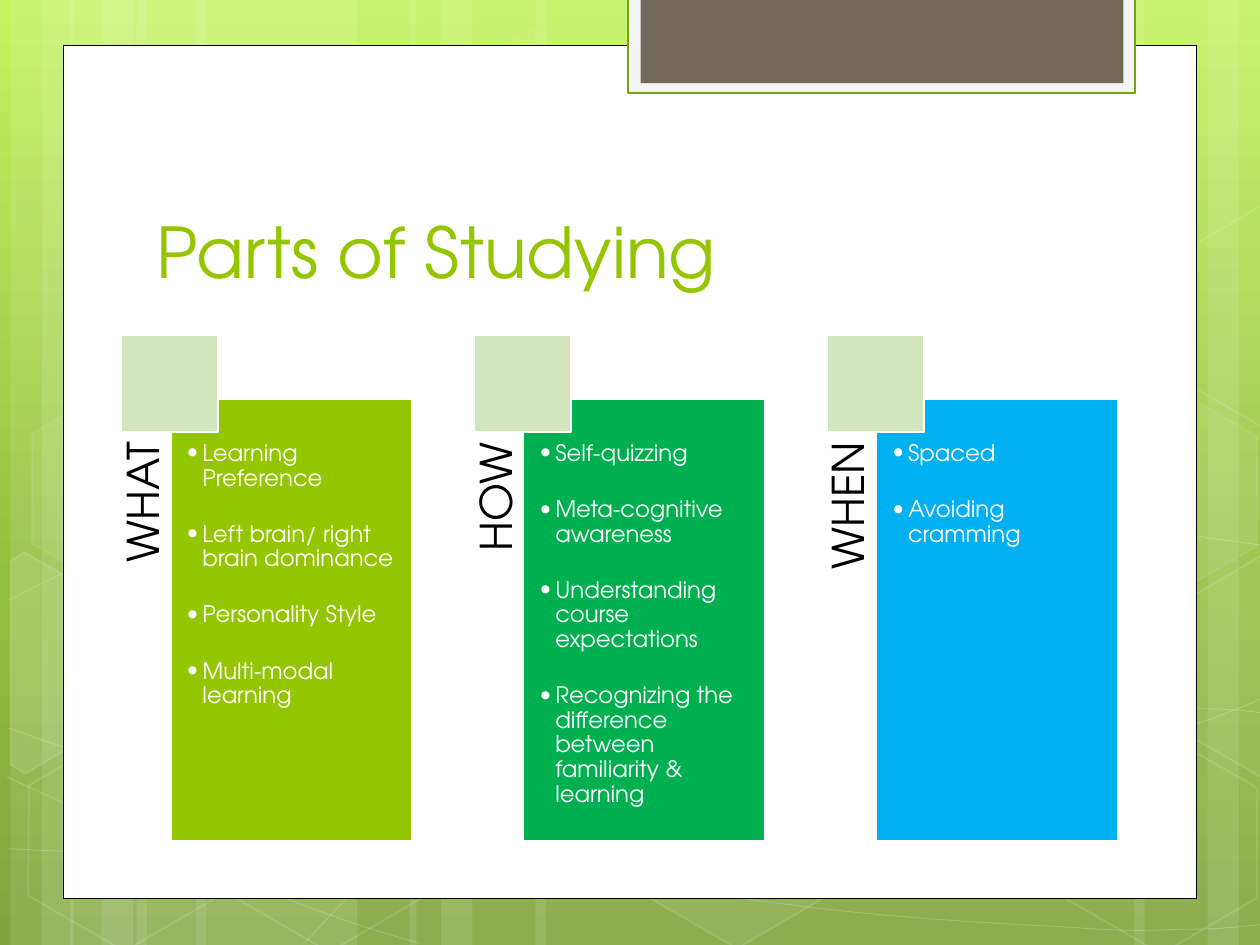
import math

from pptx import Presentation
from pptx import util as u
from pptx.dml.color import RGBColor
from pptx.enum import shapes, text
from pptx.oxml import parse_xml
from pptx.oxml.ns import nsdecls, qn
from lxml import etree

FONT = "TeX Gyre Adventor"
WHITE = "FFFFFF"
GREEN = "94C600"
RECTANGLE = shapes.MSO_SHAPE.RECTANGLE
TILT = 30

BACKGROUND_STOPS = [(0, "C3F35F"), (62, "93BF3F"), (100, "81A53E")]
STRIPES = [  # left, width, rotation
    (78, 126, 0), (6, 36, 0), (24, 60, 0), (112, 126, 0), (40, 36, 0), (58, 60, 0),
    (528, 126, 180), (690, 36, 180), (648, 60, 180), (306, 222, 0), (234, 36, 0),
    (252, 60, 0),
]
CURVES = [  # start point, then three Bezier points for each segment
    [(5, 485), (44, 487), (83, 489), (137, 488), (191, 487), (258, 486), (330, 479),
     (402, 472), (504, 458), (570, 444), (636, 431), (703, 409), (725, 397)],
    [(5, 343), (26, 332), (47, 321), (87, 310), (128, 300), (186, 284), (250, 279),
     (315, 274), (392, 273), (471, 279), (550, 284), (682, 307), (725, 312)],
    [(4, 444), (91, 484), (178, 523), (240, 539)],
    [(5, 416), (27, 424), (50, 432), (92, 444), (134, 454), (197, 472), (257, 485),
     (317, 497), (392, 510), (452, 517), (512, 525), (576, 528), (614, 530),
     (652, 533), (662, 531), (680, 531), (699, 531), (712, 529), (725, 528)],
    [(174, 539), (187, 525), (200, 510), (217, 498), (235, 485), (259, 470), (279, 460),
     (300, 450), (312, 446), (338, 438), (364, 431), (413, 421), (438, 416),
     (464, 411), (467, 411), (490, 410), (512, 408), (547, 405), (572, 405),
     (597, 404), (638, 405), (638, 405), (654, 405), (670, 405), (686, 405),
     (699, 405), (711, 406), (718, 407), (724, 408), (722, 407), (724, 408)],
]
HEXAGONS = [  # left, top, fill opacity, line opacity
    (240.5, 26, 4, 8), (358, 424, 6, 12), (8, 425.5, 0, 12), (10, 224.5, 7, 8),
    (125, 426, 0, 12), (542, 326, 10, 12), (600.5, 427, 0, 12), (600.5, 226, 7, 8),
]
CUT_HEXAGONS = [  # centre, corners as they stand on the slide, fill opacity
    ((26, 385.2), [(6, 320.4), (13.7, 315.4), (69, 347), (68.4, 410.4),
                   (14.4, 442), (6, 437)], 10),
    ((709.2, 374.4), [(666.7, 349.2), (720.7, 317.5), (726.5, 321), (726.5, 441.4),
                      (721.4, 444.2), (666.7, 412.6)], 4),
    ((709.2, 173.5), [(666.7, 149), (720.7, 117.4), (727.2, 121), (726.5, 241.2),
                      (721.4, 244), (666.7, 212.4)], 0),
]
COLUMNS = [
    ("WHAT", GREEN, ["Learning Preference", "Left brain/ right brain dominance",
                     "Personality Style", "Multi-modal learning"]),
    ("HOW", "00B050", ["Self-quizzing", "Meta-cognitive awareness",
                       "Understanding course expectations",
                       "Recognizing the difference between familiarity & learning"]),
    ("WHEN", "00B0F0", ["Spaced", "Avoiding cramming"]),
]


def rgb(value):
    return RGBColor.from_string(value)


def set_opacity(color_parent, percent):
    color = color_parent.find(qn("a:solidFill"))[0]
    etree.SubElement(color, qn("a:alpha")).set("val", str(percent * 1000))


def style(shape, fill=None, line=None, width=1, fill_opacity=100, line_opacity=100):
    shape.shadow.inherit = False
    properties = shape.element.spPr
    if fill and fill_opacity:
        shape.fill.solid()
        shape.fill.fore_color.rgb = rgb(fill)
        if fill_opacity < 100:
            set_opacity(properties, fill_opacity)
    else:
        shape.fill.background()
    if line:
        shape.line.color.rgb = rgb(line)
        shape.line.width = u.Pt(width)
        if line_opacity < 100:
            set_opacity(properties.find(qn("a:ln")), line_opacity)
    else:
        shape.line.fill.background()


def add_block(slide, box, kind=RECTANGLE, **look):
    shape = slide.shapes.add_shape(kind, *map(u.Pt, box))
    style(shape, **look)
    return shape


def add_outline(slide, points, close, **look):
    points = [(u.Pt(x), u.Pt(y)) for x, y in points]
    builder = slide.shapes.build_freeform(*points[0])
    builder.add_line_segments(points[1:], close=close)
    shape = builder.convert_to_shape()
    style(shape, line=WHITE, **look)
    return shape


def bend(shape):
    """Turn each three straight segments into one cubic Bezier segment."""
    lines = list(shape.element.iter(qn("a:lnTo")))
    for first in range(0, len(lines), 3):
        curve = etree.Element(qn("a:cubicBezTo"))
        lines[first].addprevious(curve)
        for line in lines[first:first + 3]:
            curve.append(line[0])
            line.getparent().remove(line)


def turn(point, centre, degrees):
    angle = math.radians(degrees)
    x, y = point[0] - centre[0], point[1] - centre[1]
    return (centre[0] + x * math.cos(angle) - y * math.sin(angle),
            centre[1] + x * math.sin(angle) + y * math.cos(angle))


def set_frame(frame, insets, anchor=text.MSO_ANCHOR.TOP):
    frame.word_wrap = True
    frame.vertical_anchor = anchor
    (frame.margin_left, frame.margin_top,
     frame.margin_right, frame.margin_bottom) = map(u.Pt, insets)


def add_run(paragraph, words, size, color):
    run = paragraph.add_run()
    run.text = words
    run.font.name = FONT
    run.font.size = u.Pt(size)
    run.font.color.rgb = rgb(color)


def add_bullet(paragraph, indent):
    properties = paragraph._p.get_or_add_pPr()
    properties.set("marL", str(u.Pt(indent)))
    properties.set("indent", str(-u.Pt(indent)))
    etree.SubElement(properties, qn("a:buFont")).set("typeface", FONT)
    etree.SubElement(properties, qn("a:buChar")).set("char", "•")


def set_background(slide):
    stops = "".join(f'<a:gs pos="{position * 1000}"><a:srgbClr val="{color}"/></a:gs>'
                    for position, color in BACKGROUND_STOPS)
    slide.element.cSld.insert(0, parse_xml(
        f'<p:bg {nsdecls("p", "a")}><p:bgPr><a:gradFill rotWithShape="1">'
        f'<a:gsLst>{stops}</a:gsLst><a:lin ang="5400000" scaled="0"/></a:gradFill>'
        '<a:effectLst/></p:bgPr></p:bg>'))


def add_backdrop(slide, box):
    left, top, _, height = box
    for offset, width, rotation in STRIPES:
        stripe = add_block(slide, (left + offset, top, width, height),
                           fill=WHITE, fill_opacity=10)
        stripe.rotation = rotation
    for knots in CURVES:
        points = [(left + x, top + y) for x, y in knots]
        bend(add_outline(slide, points, False, width=0.5, line_opacity=20))
    for x, y, fill_opacity, line_opacity in HEXAGONS:
        hexagon = add_block(slide, (left + x, top + y, 126, 109.5),
                            shapes.MSO_SHAPE.HEXAGON, fill=WHITE, line=WHITE,
                            fill_opacity=fill_opacity, line_opacity=line_opacity)
        hexagon.adjustments[0] = 0.285
        hexagon.rotation = TILT
    for centre, corners, fill_opacity in CUT_HEXAGONS:
        level = [turn(corner, centre, -TILT) for corner in corners]
        points = [(left + x, top + y) for x, y in level]
        cut = add_outline(slide, points, True, fill=WHITE,
                          fill_opacity=fill_opacity, line_opacity=12)
        cut.rotation = TILT


def add_page(slide, box):
    left, top, _, _ = box
    add_block(slide, box, fill=WHITE, line="000000", width=0.5)
    add_block(slide, (left + 323, top - 27.5, 289.5, 54.5),
              fill="F5F5F5", line="74A510", width=1.25)
    add_block(slide, (left + 330, top - 27.5, 276, 49), fill="71685A")


def add_text_frame(slide, box, insets, anchor=text.MSO_ANCHOR.TOP, rotation=0):
    shape = slide.shapes.add_textbox(*map(u.Pt, box))
    shape.rotation = rotation
    set_frame(shape.text_frame, insets, anchor)
    return shape.text_frame


def add_title(slide, box, words):
    frame = add_text_frame(slide, box, (7.2, 3.6, 7.2, 3.6), text.MSO_ANCHOR.BOTTOM)
    add_run(frame.paragraphs[0], words, 40, GREEN)


def add_column(slide, box, heading, color, items):
    """Sideways heading, bulleted panel and a square over their corner."""
    left, top, width, height = box
    square, strip, drop = 55.4, 28, 36.7
    length = height - drop

    label_box = (left + (strip - length) / 2, top + drop + (length - strip) / 2,
                 length, strip)
    frame = add_text_frame(slide, label_box, (0, 0, 24.5, 0), rotation=270)
    paragraph = frame.paragraphs[0]
    paragraph.alignment = text.PP_ALIGN.RIGHT
    paragraph.line_spacing = 0.9
    add_run(paragraph, heading, 25, "000000")

    panel_box = (left + strip, top + drop, width - strip, length)
    add_block(slide, panel_box, fill=color, line=WHITE, width=1.25)
    frame = add_text_frame(slide, panel_box, (9.3, 24.3, 9.2, 9.2))
    for index, item in enumerate(items):
        paragraph = frame.add_paragraph() if index else frame.paragraphs[0]
        paragraph.line_spacing = 0.9
        paragraph.space_after = u.Pt(18)
        add_bullet(paragraph, 9)
        add_run(paragraph, item, 13, WHITE)

    add_block(slide, (left, top, square, square), fill="D2E5BD", line=WHITE, width=1.25)


def main():
    presentation = Presentation()
    presentation.slide_width, presentation.slide_height = u.Pt(720), u.Pt(540)
    slide = presentation.slides.add_slide(presentation.slide_layouts[6])
    set_background(slide)
    add_backdrop(slide, (0, 0, 720, 540))
    add_page(slide, (36, 26, 648, 487.2))
    add_title(slide, (82.3, 80.6, 553, 90), "Parts of Studying")
    for index, column in enumerate(COLUMNS):
        add_column(slide, (69.4 + index * 201.6, 191.5, 166.2, 289.4), *column)
    presentation.save("out.pptx")


if __name__ == "__main__":
    main()
